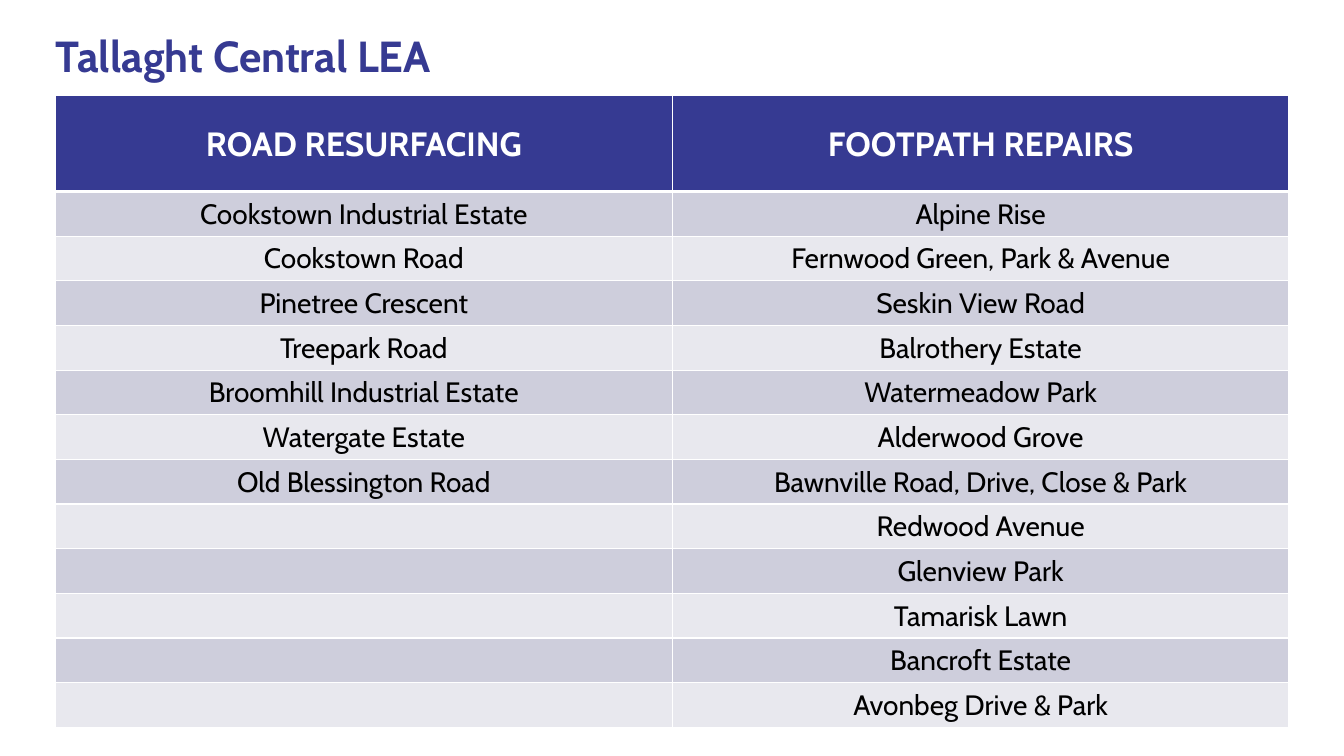
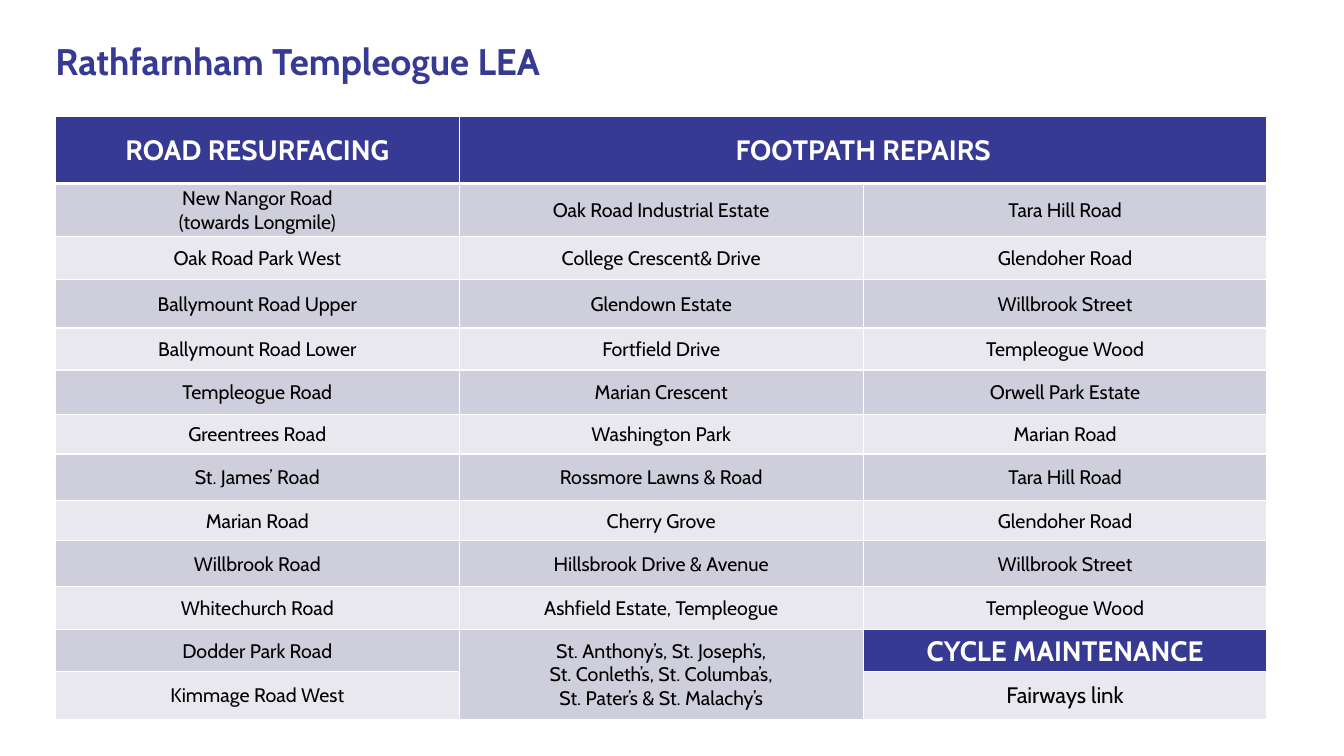
from itertools import zip_longest

from lxml import etree
from pptx import Presentation
from pptx.dml.color import RGBColor
from pptx.enum.text import MSO_ANCHOR, PP_ALIGN
from pptx.oxml.ns import qn
from pptx.util import Pt

LEFT, CENTER = PP_ALIGN.LEFT, PP_ALIGN.CENTER
MIDDLE = MSO_ANCHOR.MIDDLE

FONT = "Cabin"
COLORS = {
    "navy": "363A92",
    "white": "FFFFFF",
    "black": "000000",
    "dark_band": "CECEDC",
    "light_band": "E8E8EE",
}
MARGIN_LEFT = 39.6
TITLE_TOP, TITLE_WIDTH = 26, 440
CELL_MARGIN = 0.72
THIN, THICK = 1, 3

# Each column starts with its heading; merges are (first row, column, last row, column).
SLIDES = [
    {
        "title": "Tallaght Central LEA",
        "title_size": 31,
        "title_height": 32,
        "line_spacing": 0.9,
        "top": 68.4,
        "width": 881.2,
        "row_heights": [68.4] + [31.9] * 12,
        "head_size": 24,
        "body_size": 20,
        "columns": [
            ["ROAD RESURFACING", "Cookstown Industrial Estate", "Cookstown Road",
             "Pinetree Crescent", "Treepark Road", "Broomhill Industrial Estate",
             "Watergate Estate", "Old Blessington Road"],
            ["FOOTPATH REPAIRS", "Alpine Rise", "Fernwood Green, Park & Avenue",
             "Seskin View Road", "Balrothery Estate", "Watermeadow Park",
             "Alderwood Grove", "Bawnville Road, Drive, Close & Park",
             "Redwood Avenue", "Glenview Park", "Tamarisk Lawn",
             "Bancroft Estate", "Avonbeg Drive & Park"],
        ],
        "merges": [],
        "subheads": [],
        "sizes": {},
    },
    {
        "title": "Rathfarnham Templeogue LEA",
        "title_size": 26.4,
        "title_height": 40,
        "line_spacing": 0.8,
        "top": 83,
        "width": 865.5,
        "row_heights": [48, 38, 30.4, 35, 30, 32, 28, 33, 29, 32.5, 31, 30, 34],
        "head_size": 20,
        "body_size": 14,
        "columns": [
            ["ROAD RESURFACING", "New Nangor Road\n(towards Longmile)",
             "Oak Road Park West", "Ballymount Road Upper", "Ballymount Road Lower",
             "Templeogue Road", "Greentrees Road", "St. James’ Road", "Marian Road",
             "Willbrook Road", "Whitechurch Road", "Dodder Park Road",
             "Kimmage Road West"],
            ["FOOTPATH REPAIRS", "Oak Road Industrial Estate",
             "College Crescent& Drive", "Glendown Estate", "Fortfield Drive",
             "Marian Crescent", "Washington Park", "Rossmore Lawns & Road",
             "Cherry Grove", "Hillsbrook Drive & Avenue",
             "Ashfield Estate, Templeogue",
             "St. Anthony’s, St. Joseph’s,\nSt. Conleth’s, St. Columba’s,\n"
             "St. Pater’s & St. Malachy’s"],
            ["", "Tara Hill Road", "Glendoher Road", "Willbrook Street",
             "Templeogue Wood", "Orwell Park Estate", "Marian Road",
             "Tara Hill Road", "Glendoher Road", "Willbrook Street",
             "Templeogue Wood", "CYCLE MAINTENANCE", "Fairways link"],
        ],
        "merges": [(0, 1, 0, 2), (11, 1, 12, 1)],
        "subheads": [(11, 2)],
        "sizes": {(12, 2): 16},
    },
]


def rgb(name):
    return RGBColor.from_string(COLORS[name])


def write(tf, text, size, color, bold=False, align=CENTER, spacing=None):
    """Fill a text frame, one paragraph for each line of text."""
    for i, line in enumerate(text.split("\n")):
        p = tf.add_paragraph() if i else tf.paragraphs[0]
        p.alignment = align
        if spacing:
            p.line_spacing = spacing
        r = p.add_run()
        r.text = line
        r.font.name = FONT
        r.font.size = Pt(size)
        r.font.bold = bold
        r.font.color.rgb = rgb(color)


def set_borders(cell, top, bottom):
    """Draw white cell borders; the XML wants them ahead of the fill."""
    tc_pr = cell._tc.get_or_add_tcPr()
    widths = {"lnL": THIN, "lnR": THIN, "lnT": top, "lnB": bottom}
    for i, (tag, width) in enumerate(widths.items()):
        ln = etree.Element(qn(f"a:{tag}"), w=str(Pt(width)))
        fill = etree.SubElement(ln, qn("a:solidFill"))
        etree.SubElement(fill, qn("a:srgbClr"), val=COLORS["white"])
        tc_pr.insert(i, ln)


def add_title(s, data):
    box = s.shapes.add_textbox(Pt(MARGIN_LEFT), Pt(TITLE_TOP),
                               Pt(TITLE_WIDTH), Pt(data["title_height"]))
    tf = box.text_frame
    tf.word_wrap = True
    tf.vertical_anchor = MIDDLE
    tf.margin_left = tf.margin_right = tf.margin_top = tf.margin_bottom = 0
    write(tf, data["title"], data["title_size"], "navy", bold=True,
          align=LEFT, spacing=data["line_spacing"])


def format_cell(cell, row, text, size, is_head):
    band = "dark_band" if row % 2 else "light_band"
    cell.fill.solid()
    cell.fill.fore_color.rgb = rgb("navy" if is_head else band)
    set_borders(cell, THICK if row == 1 else THIN, THICK if row == 0 else THIN)
    cell.vertical_anchor = MIDDLE
    cell.margin_left = cell.margin_right = cell.margin_top = Pt(CELL_MARGIN)
    cell.margin_bottom = 0
    if text:
        write(cell.text_frame, text, size, "white" if is_head else "black",
              bold=is_head)


def add_works_table(s, data):
    heights, columns = data["row_heights"], data["columns"]
    table = s.shapes.add_table(len(heights), len(columns), Pt(MARGIN_LEFT),
                               Pt(data["top"]), Pt(data["width"]),
                               Pt(sum(heights))).table
    table.horz_banding = False
    for col in table.columns:
        col.width = Pt(data["width"] / len(columns))
    for row, height in zip(table.rows, heights):
        row.height = Pt(height)
    for i, texts in enumerate(zip_longest(*columns, fillvalue="")):
        for j, text in enumerate(texts):
            is_head = i == 0 or (i, j) in data["subheads"]
            size = data["head_size"] if is_head else data["body_size"]
            format_cell(table.cell(i, j), i, text,
                        data["sizes"].get((i, j), size), is_head)
    for r0, c0, r1, c1 in data["merges"]:
        table.cell(r0, c0).merge(table.cell(r1, c1))


def main():
    prs = Presentation()
    prs.slide_width, prs.slide_height = Pt(960), Pt(540)
    for data in SLIDES:
        s = prs.slides.add_slide(prs.slide_layouts[6])
        add_title(s, data)
        add_works_table(s, data)
    prs.save("out.pptx")


if __name__ == "__main__":
    main()
